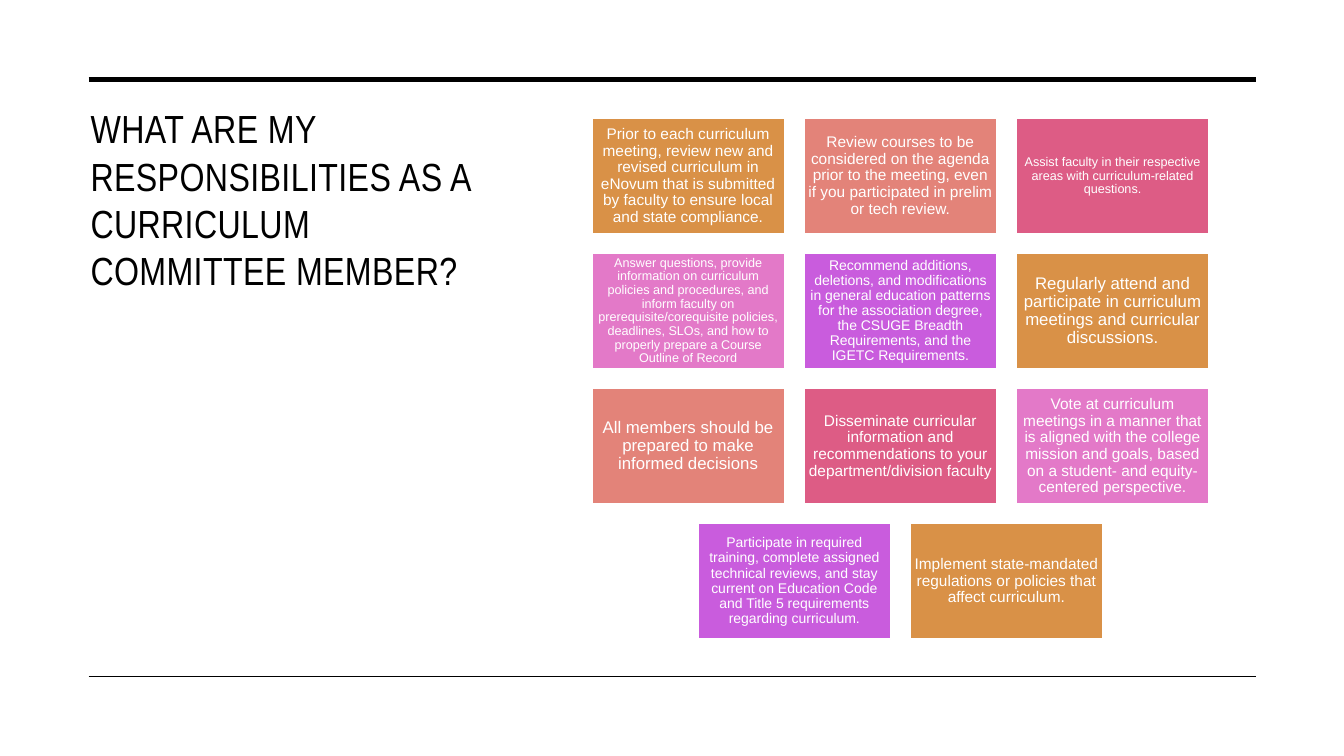
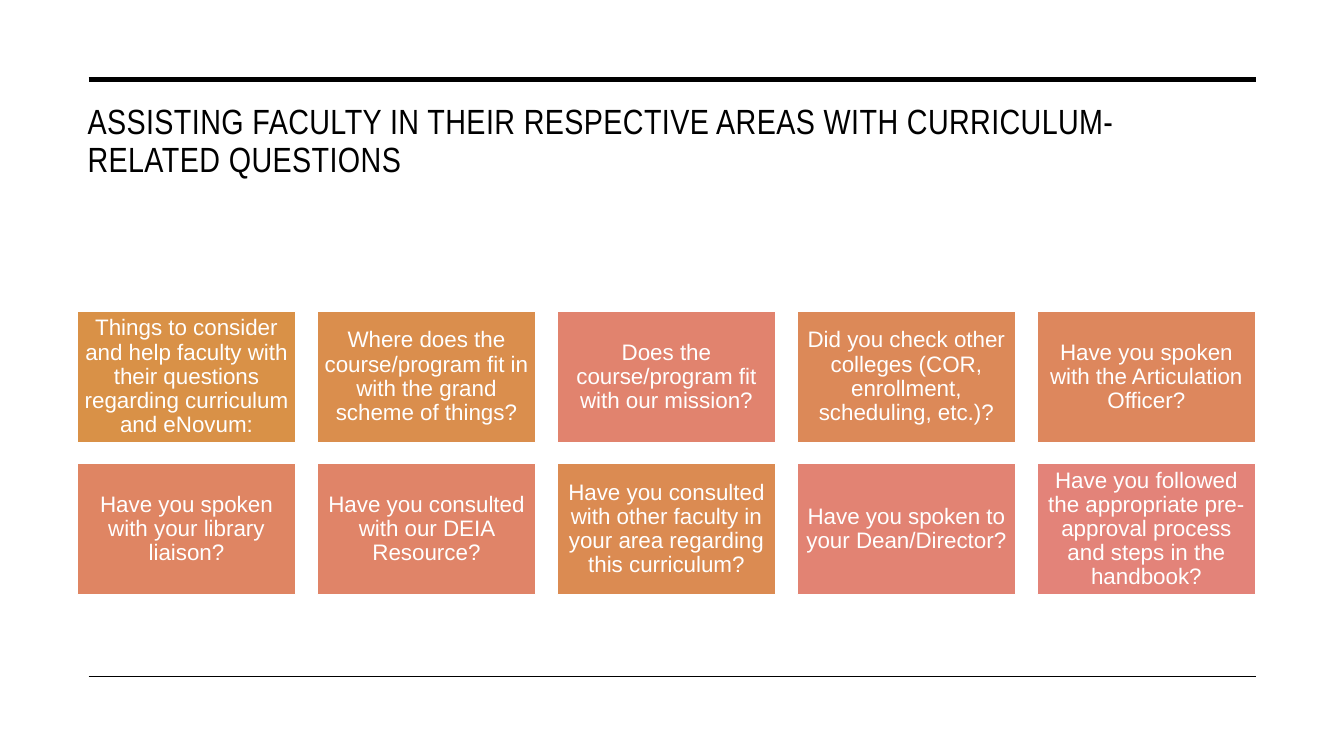
from pptx import Presentation
from pptx.dml.color import RGBColor
from pptx.enum.shapes import MSO_CONNECTOR as CONN, MSO_SHAPE as SHAPE
from pptx.enum.text import MSO_ANCHOR as ANCHOR, PP_ALIGN as ALIGN
from pptx.oxml.ns import qn
from pptx.util import Inches, Pt

W, H = 13.33, 7.5
COLORS = {
    "black": "000000", "white": "FFFFFF", "orange": "D99147", "coral": "E38379",
    "rose": "DD5C85", "pink": "E379C8", "violet": "C95CDD",
    "warm1": "DA8E4D", "warm2": "DB8B52", "warm3": "DC8958", "warm4": "DD875D",
    "warm5": "DF8563", "warm6": "E08468", "warm7": "E1836E", "warm8": "E28373",
}
RULES = [(0.79, 3.5), (6.71, 1)]

SLIDES = [
    {
        "title": "WHAT ARE MY RESPONSIBILITIES AS A CURRICULUM COMMITTEE MEMBER?",
        "title_box": (0.8, 0.99, 4, 4.82), "title_size": 28, "title_spacing": 1,
        "grid": {"left": 5.87, "top": 1.17, "w": 1.91, "h": 1.15, "gap_x": 0.195, "gap_y": 0.19, "cols": 3},
        "cards": [
            ("Prior to each curriculum meeting, review new and revised curriculum in eNovum that is "
             "submitted by faculty to ensure local and state compliance.", "orange", 11),
            ("Review courses to be considered on the agenda prior to the meeting, even if you "
             "participated in prelim or tech review.", "coral", 11),
            ("Assist faculty in their respective areas with curriculum-related questions.", "rose", 9),
            ("Answer questions, provide information on curriculum policies and procedures, and inform "
             "faculty on prerequisite/corequisite policies, deadlines, SLOs, and how to properly "
             "prepare a Course Outline of Record", "pink", 9),
            ("Recommend additions, deletions, and modifications in general education patterns for the "
             "association degree, the CSUGE Breadth Requirements, and the IGETC Requirements.", "violet", 10),
            ("Regularly attend and participate in curriculum meetings and curricular discussions.", "orange", 12),
            ("All members should be prepared to make informed decisions", "coral", 12),
            ("Disseminate curricular information and recommendations to your department/division faculty",
             "rose", 11),
            ("Vote at curriculum meetings in a manner that is aligned with the college mission and goals, "
             "based on a student- and equity-centered perspective.", "pink", 11),
            ("Participate in required training, complete assigned technical reviews, and stay current on "
             "Education Code and Title 5 requirements regarding curriculum.", "violet", 10),
            ("Implement state-mandated regulations or policies that affect curriculum.", "orange", 11),
        ],
    },
    {
        "title": "ASSISTING FACULTY IN THEIR RESPECTIVE AREAS WITH CURRICULUM-RELATED QUESTIONS",
        "title_box": (0.77, 0.99, 11.69, 1.26), "title_size": 25, "title_spacing": 0.9,
        "grid": {"left": 0.77, "top": 3.09, "w": 2.16, "h": 1.3, "gap_x": 0.22, "gap_y": 0.21, "cols": 5},
        "cards": [
            ("Things to consider and help faculty with their questions regarding curriculum and eNovum:",
             "orange", 16),
            ("Where does the course/program fit in with the grand scheme of things?", "warm1", 16),
            ("Does the course/program fit with our mission?", "warm7", 16),
            ("Did you check other colleges (COR, enrollment, scheduling, etc.)?", "warm3", 16),
            ("Have you spoken with the Articulation Officer?", "warm4", 16),
            ("Have you spoken with your library liaison?", "warm5", 16),
            ("Have you consulted with our DEIA Resource?", "warm6", 16),
            ("Have you consulted with other faculty in your area regarding this curriculum?", "warm2", 16),
            ("Have you spoken to your Dean/Director?", "warm8", 16),
            ("Have you followed the appropriate pre-approval process and steps in the handbook?", "coral", 16),
        ],
    },
]


def rgb(name):
    return RGBColor.from_string(COLORS[name])


def put_text(sp, text, size, font="Arial", color="white", align=ALIGN.CENTER,
             anchor=ANCHOR.MIDDLE, inset=(0.05, 0.05), spacing=0.9, tracking=None):
    tf = sp.text_frame
    tf.word_wrap = True
    tf.vertical_anchor = anchor
    tf.margin_left = tf.margin_right = Inches(inset[0])
    tf.margin_top = tf.margin_bottom = Inches(inset[1])
    p = tf.paragraphs[0]
    p.alignment, p.line_spacing = align, spacing
    r = p.add_run()
    r.text = text
    r.font.size, r.font.name = Pt(size), font
    r.font.color.rgb = rgb(color)
    if tracking:
        r.font._element.set("spc", str(round(tracking * 100)))


def add_rule(s, y, width):
    line = s.shapes.add_connector(CONN.STRAIGHT, Inches(0.88), Inches(y), Inches(12.46), Inches(y))
    line.line.color.rgb = rgb("black")
    line.line.width = Pt(width)
    sp_pr = line._element.spPr
    sp_pr.append(sp_pr.makeelement(qn("a:effectLst"), {}))


def add_card(s, box, text, color, size):
    sp = s.shapes.add_shape(SHAPE.RECTANGLE, *map(Inches, box))
    sp.shadow.inherit = False
    sp.fill.solid()
    sp.fill.fore_color.rgb = rgb(color)
    sp.line.color.rgb = rgb("white")
    sp.line.width = Pt(1)
    inset = round(size / 270, 2)
    put_text(sp, text, size, inset=(inset, inset))


def add_cards(s, cards, left, top, w, h, gap_x, gap_y, cols):
    for i, card in enumerate(cards):
        row, col = divmod(i, cols)
        missing = max(0, (row + 1) * cols - len(cards))
        x = left + (col + missing / 2) * (w + gap_x)
        add_card(s, (x, top + row * (h + gap_y), w, h), *card)


def build_slide(prs, data):
    s = prs.slides.add_slide(prs.slide_layouts[6])
    title = s.shapes.add_textbox(*map(Inches, data["title_box"]))
    put_text(title, data["title"], data["title_size"], font="Arial Narrow", color="black",
             align=ALIGN.LEFT, anchor=ANCHOR.TOP, inset=(0.1, 0.05),
             spacing=data["title_spacing"], tracking=0.3)
    for y, width in RULES:
        add_rule(s, y, width)
    add_cards(s, data["cards"], **data["grid"])


def main():
    prs = Presentation()
    prs.slide_width, prs.slide_height = Inches(W), Inches(H)
    for data in SLIDES:
        build_slide(prs, data)
    prs.save("out.pptx")


if __name__ == "__main__":
    main()
